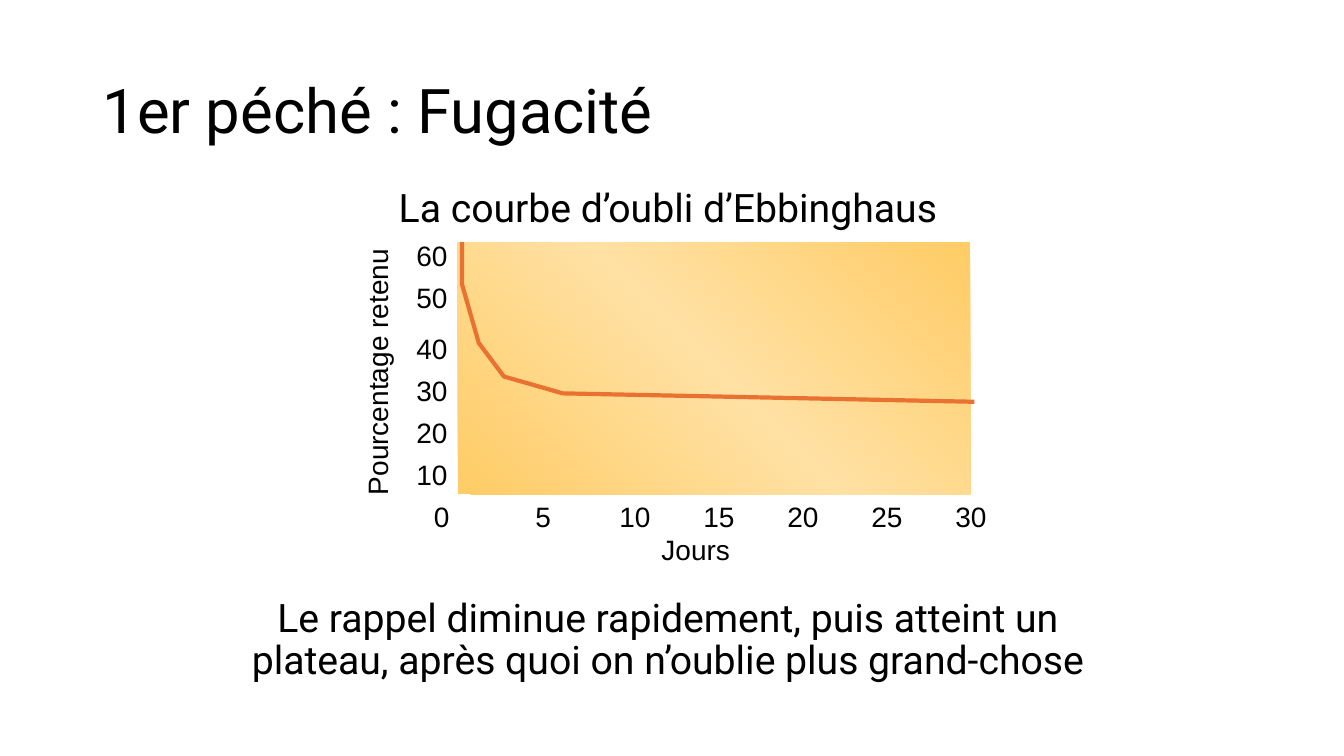
import copy

import pptx
import pptx.dml.color
import pptx.enum.text
import pptx.oxml.ns
import pptx.util

Pt = pptx.util.Pt
ALIGN = pptx.enum.text.PP_ALIGN
ANCHOR = pptx.enum.text.MSO_ANCHOR
COLORS = {"text": "000000", "amber": "FFCC66", "cream": "FFE1A4", "curve": "E97132"}

RETENTION_TOPS = {"60": 167, "50": 197, "40": 233, "30": 263, "20": 293, "10": 323}
DAY_CENTERS = {"0": 315.5, "5": 388} | {str(10 + 5 * i): 453.5 + 60 * i for i in range(5)}
CURVE = [(330, 173), (330, 203), (342, 245), (360, 269), (402, 281), (696, 287)]


def color(name):
    return pptx.dml.color.RGBColor.from_string(COLORS[name])


def write(box, text, font, size, align, spacing=1.0):
    para = box.text_frame.paragraphs[0]
    para.text = text
    para.alignment = align
    para.line_spacing = spacing
    para.font.name = font
    para.font.size = Pt(size)
    para.font.color.rgb = color("text")


def add_title(page, text):
    title = page.shapes.title
    title.left, title.top, title.width, title.height = Pt(66), Pt(29), Pt(828), Pt(104.5)
    title.text_frame.vertical_anchor = ANCHOR.MIDDLE
    write(title, text, "Roboto", 44, ALIGN.LEFT, 0.9)


def add_statement(page, text, left, top, width, height):
    box = page.shapes.add_textbox(Pt(left), Pt(top), Pt(width), Pt(height))
    box.text_frame.word_wrap = True
    write(box, text, "Roboto", 28, ALIGN.CENTER, 0.9)


def add_label(page, text, center, top, width=37, rotation=0):
    box = page.shapes.add_textbox(Pt(center - width / 2), Pt(top), Pt(width), Pt(31.5))
    box.text_frame.word_wrap = False
    box.rotation = rotation
    write(box, text, "Arial", 20, ALIGN.CENTER)


def add_plot_area(page):
    plot = page.shapes.add_shape(
        pptx.enum.shapes.MSO_SHAPE.RECTANGLE, Pt(327), Pt(173), Pt(366), Pt(180))
    plot.shadow.inherit = False
    plot.line.fill.background()
    plot.fill.gradient()
    plot.fill.gradient_angle = 45
    stop_list = next(plot._element.iter(pptx.oxml.ns.qn("a:gsLst")))
    stop_list.append(copy.deepcopy(stop_list[0]))
    for i, (stop, name) in enumerate(zip(plot.fill.gradient_stops, ["amber", "cream", "amber"])):
        stop.position = i / 2
        stop.color.rgb = color(name)


def add_curve(page):
    points = [(Pt(x), Pt(y)) for x, y in CURVE]
    builder = page.shapes.build_freeform(*points[0], scale=1.0)
    builder.add_line_segments(points[1:], close=False)
    curve = builder.convert_to_shape()
    curve.shadow.inherit = False
    curve.fill.background()
    curve.line.color.rgb = color("curve")
    curve.line.width = Pt(3)


def main():
    deck = pptx.Presentation()
    deck.slide_width, deck.slide_height = Pt(960), Pt(540)
    page = deck.slides.add_slide(deck.slide_layouts.get_by_name("Title Only"))
    add_title(page, "1er péché : Fugacité")
    add_statement(
        page,
        "Le rappel diminue rapidement, puis atteint un plateau, "
        "après quoi on n’oublie plus grand-chose",
        162, 424, 630, 74)
    add_plot_area(page)
    add_label(page, "Pourcentage retenu", 269.5, 250, 192, 270)
    for percentage, top in RETENTION_TOPS.items():
        add_label(page, percentage, 308.5, top)
    for day, center in DAY_CENTERS.items():
        add_label(page, day, center, 353)
    add_label(page, "Jours", 497, 377, 64)
    add_curve(page)
    add_statement(page, "La courbe d’oubli d’Ebbinghaus", 240, 131, 474, 46)
    deck.save("out.pptx")


if __name__ == "__main__":
    main()
